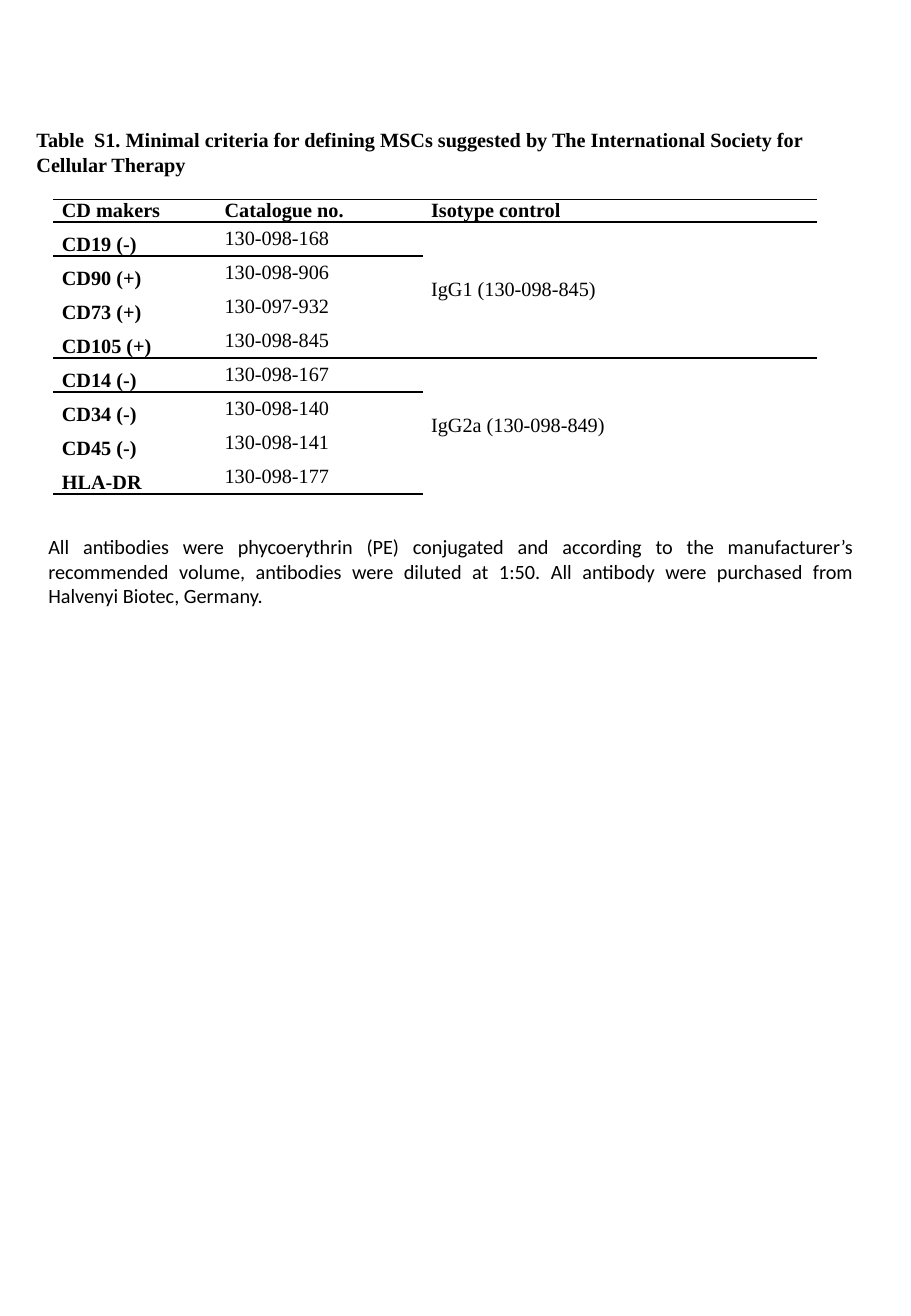
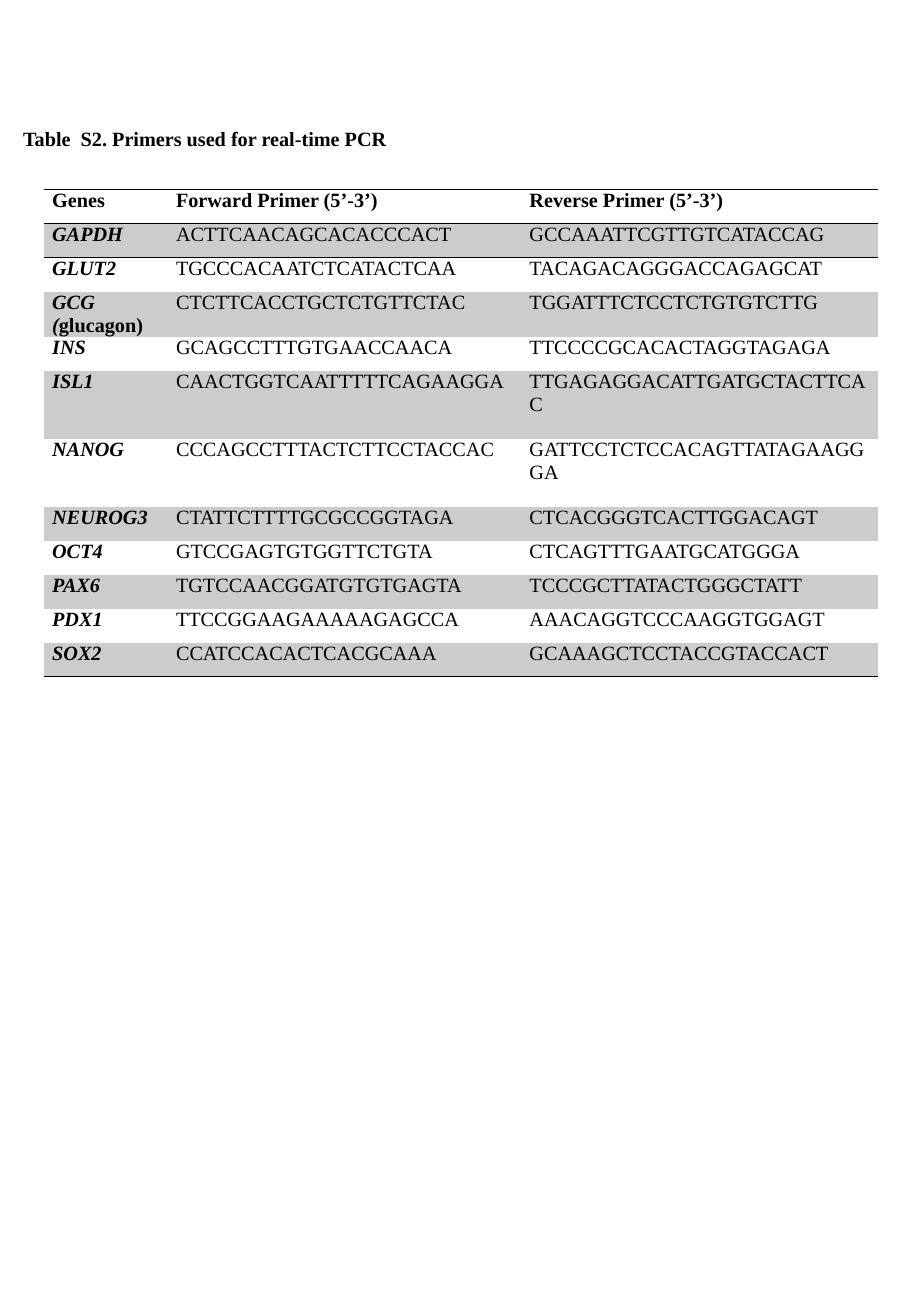
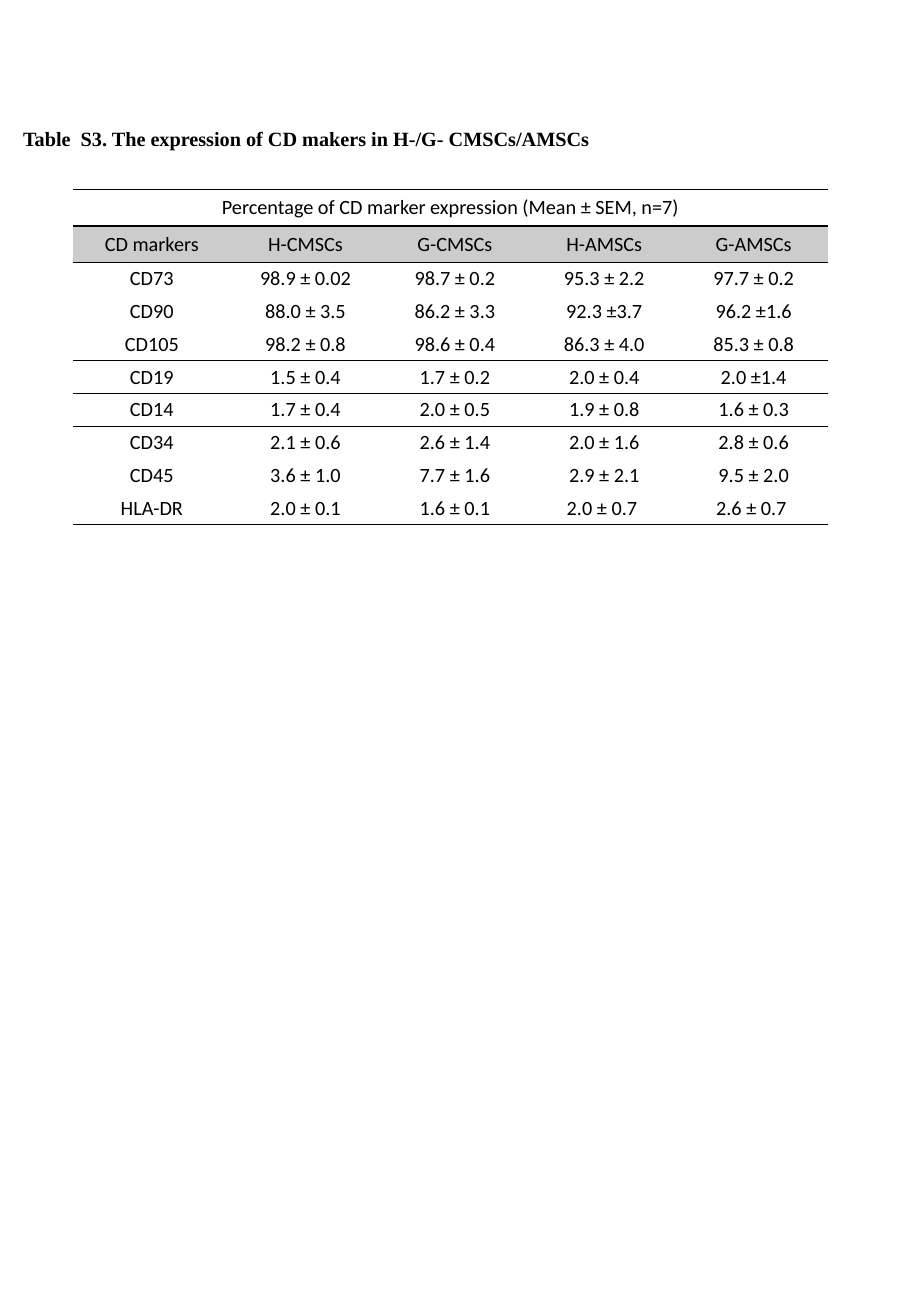
from dataclasses import dataclass

from lxml import etree
from pptx import Presentation
from pptx.dml.color import RGBColor
from pptx.enum import text
from pptx.oxml import ns
from pptx.util import Inches, Pt


@dataclass(frozen=True)
class Theme:
    ink: RGBColor = RGBColor(0x00, 0x00, 0x00)
    band: RGBColor = RGBColor(0xCC, 0xCC, 0xCC)
    serif: str = "Times New Roman"
    sans: str = "Calibri"
    size: Pt = Pt(12)
    rule: Pt = Pt(1)
    plain_table: str = "{2D5ABB26-0587-4C30-8999-92F81FD0307C}"


theme = Theme()
LEFT, CENTER, JUSTIFY = text.PP_ALIGN.LEFT, text.PP_ALIGN.CENTER, text.PP_ALIGN.JUSTIFY
TOP, MIDDLE = text.MSO_ANCHOR.TOP, text.MSO_ANCHOR.MIDDLE


def write(text_frame, runs, font_name, alignment, bold=False, italic=False):
    paragraph = text_frame.paragraphs[0]
    paragraph.alignment = alignment
    for words in runs:
        run = paragraph.add_run()
        run.text = words
        run.font.name = font_name
        run.font.size = theme.size
        run.font.color.rgb = theme.ink
        run.font.bold = bold
        run.font.italic = italic
    return paragraph


def add_ruled_table(slide, left, top, widths, heights, rules, bands, anchor):
    frame = slide.shapes.add_table(
        len(heights), len(widths), Inches(left), Inches(top),
        Inches(sum(widths)), Inches(sum(heights)))
    table = frame.table
    table.first_row = table.horz_banding = False
    frame._element.find(".//" + ns.qn("a:tableStyleId")).text = theme.plain_table
    for column, width in zip(table.columns, widths):
        column.width = Inches(width)
    for index, (row, height) in enumerate(zip(table.rows, heights)):
        row.height = Inches(height)
        for cell in row.cells:
            cell.vertical_anchor = anchor
            cell.margin_left = cell.margin_right = Inches(0.07)
            cell.margin_top = cell.margin_bottom = 0
            if index in bands:
                cell.fill.solid()
                cell.fill.fore_color.rgb = theme.band
            else:
                cell.fill.background()
            properties = cell._tc.get_or_add_tcPr()
            edges = [("a:lnT", index), ("a:lnB", index + 1)]
            sides = [tag for tag, boundary in edges if boundary in rules]
            for position, tag in enumerate(sides):
                line = etree.Element(ns.qn(tag), w=str(theme.rule))
                fill = etree.SubElement(line, ns.qn("a:solidFill"))
                etree.SubElement(fill, ns.qn("a:srgbClr"), val=str(theme.ink))
                properties.insert(position, line)
    return table


presentation = Presentation()
presentation.slide_width = Inches(7.5)
presentation.slide_height = Inches(10.83)

titles = [
    ("Table  S1. Minimal criteria for defining MSCs suggested by "
     "The International Society for Cellular Therapy", 0.2, 1, 6.52, 0.5),
    ("Table  S2. Primers used for real-time PCR", 0.09, 0.99, 7.25, 0.3),
    ("Table  S3. The expression of CD makers in H-/G- CMSCs/AMSCs",
     0.09, 0.99, 7.25, 0.3),
]
slides = []
for words, left, top, width, height in titles:
    slide = presentation.slides.add_slide(presentation.slide_layouts[5])
    title = slide.shapes.title
    title.left, title.top = Inches(left), Inches(top)
    title.width, title.height = Inches(width), Inches(height)
    title.text_frame.auto_size = text.MSO_AUTO_SIZE.NONE
    title.text_frame.vertical_anchor = TOP
    write(title.text_frame, [words], theme.serif, JUSTIFY, bold=True)
    slides.append(slide)
criteria_slide, primer_slide, expression_slide = slides

antibodies = [
    ("CD makers", "Catalogue no.", "Isotype control"),
    ("CD19 (-)", "130-098-168", "IgG1 (130-098-845)"),
    ("CD90 (+)", "130-098-906", ""),
    ("CD73 (+)", "130-097-932", ""),
    ("CD105 (+)", "130-098-845", ""),
    ("CD14 (-)", "130-098-167", "IgG2a (130-098-849)"),
    ("CD34 (-)", "130-098-140", ""),
    ("CD45 (-)", "130-098-141", ""),
    ("HLA-DR", "130-098-177", ""),
]
table = add_ruled_table(
    criteria_slide, 0.44, 1.64, [1.34, 1.7, 3.25], [0.18] + [0.28] * 8,
    {0, 1, 5, 9}, set(), MIDDLE)
for first in (1, 5):
    table.cell(first, 2).merge(table.cell(first + 3, 2))
for row, entries in enumerate(antibodies):
    for column, words in enumerate(entries):
        if words:
            paragraph = write(table.cell(row, column).text_frame, [words],
                              theme.serif, LEFT, bold=row == 0 or column == 0)
            if row and column == 0:
                paragraph.line_spacing = 1.5

footnote = criteria_slide.shapes.add_textbox(
    Inches(0.3), Inches(4.35), Inches(6.83), Inches(0.71))
footnote.text_frame.word_wrap = True
write(footnote.text_frame, [
    "All antibodies were phycoerythrin (PE) conjugated and according to the "
    "manufacturer’s recommended volume, antibodies were diluted at 1:50. "
    "All antibody were purchased from Halvenyi Biotec, Germany."],
    theme.sans, JUSTIFY)

primers = [
    ("Genes", "Forward Primer (5’-3’)", "Reverse Primer (5’-3’)"),
    ("GAPDH", "ACTTCAACAGCACACCCACT", "GCCAAATTCGTTGTCATACCAG"),
    ("GLUT2", "TGCCCACAATCTCATACTCAA", "TACAGACAGGGACCAGAGCAT"),
    ("GCG (|glucagon)", "CTCTTCACCTGCTCTGTTCTAC", "TGGATTTCTCCTCTGTGTCTTG"),
    ("INS", "GCAGCCTTTGTGAACCAACA", "TTCCCCGCACACTAGGTAGAGA"),
    ("ISL1", "CAACTGGTCAATTTTTCAGAAGGA", "TTGAGAGGACATTGATGCTACTTCAC"),
    ("NANOG", "CCCAGCCTTTACTCTTCCTACCAC", "GATTCCTCTCCACAGTTATAGAAGGGA"),
    ("NEUROG3", "CTATTCTTTTGCGCCGGTAGA", "CTCACGGGTCACTTGGACAGT"),
    ("OCT4", "GTCCGAGTGTGGTTCTGTA", "CTCAGTTTGAATGCATGGGA"),
    ("PAX6", "TGTCCAACGGATGTGTGAGTA", "TCCCGCTTATACTGGGCTATT"),
    ("PDX1", "TTCCGGAAGAAAAAGAGCCA", "AAACAGGTCCCAAGGTGGAGT"),
    ("SOX2", "CCATCCACACTCACGCAAA", "GCAAAGCTCCTACCGTACCACT"),
]
table = add_ruled_table(
    primer_slide, 0.36, 1.56, [1.02, 2.91, 2.94],
    [0.28] * 5 + [0.56] * 2 + [0.28] * 5,
    {0, 1, 12}, set(range(1, 12, 2)), TOP)
for row, entries in enumerate(primers):
    for column, words in enumerate(entries):
        paragraph = write(table.cell(row, column).text_frame, words.split("|"),
                          theme.serif, JUSTIFY, bold=row == 0 or column == 0,
                          italic=row > 0 and column == 0)
        for run in paragraph.runs[1:]:
            run.font.italic = False

expression = [
    ("Percentage of CD marker expression (Mean ± SEM, n=7)",),
    ("CD markers", "H-CMSCs", "G-CMSCs", "H-AMSCs", "G-AMSCs"),
    ("CD73", "98.9 ± 0.02", "98.7 ± 0.2", "95.3 ± 2.2", "97.7 ± 0.2"),
    ("CD90", "88.0 ± 3.5", "86.2 ± 3.3", "92.3 ±3.7", "96.2 ±1.6"),
    ("CD105", "98.2 ± 0.8", "98.6 ± 0.4", "86.3 ± 4.0", "85.3 ± 0.8"),
    ("CD19", "1.5 ± 0.4", "1.7 ± 0.2", "2.0 ± 0.4", "2.0 ±1.4"),
    ("CD14", "1.7 ± 0.4", "2.0 ± 0.5", "1.9 ± 0.8", "1.6 ± 0.3"),
    ("CD34", "2.1 ± 0.6", "2.6 ± 1.4", "2.0 ± 1.6", "2.8 ± 0.6"),
    ("CD45", "3.6 ± 1.0", "7.7 ± 1.6", "2.9 ± 2.1", "9.5 ± 2.0"),
    ("HLA-DR", "2.0 ± 0.1", "1.6 ± 0.1", "2.0 ± 0.7 ", "2.6 ± 0.7 "),
]
table = add_ruled_table(
    expression_slide, 0.6, 1.56, [1.3] + [1.23] * 4, [0.3] * 2 + [0.27] * 8,
    {0, 1, 5, 6, 10}, {1}, MIDDLE)
table.cell(0, 0).merge(table.cell(0, 4))
for row, entries in enumerate(expression):
    for column, words in enumerate(entries):
        write(table.cell(row, column).text_frame, [words], theme.sans, CENTER)

presentation.save("out.pptx")
